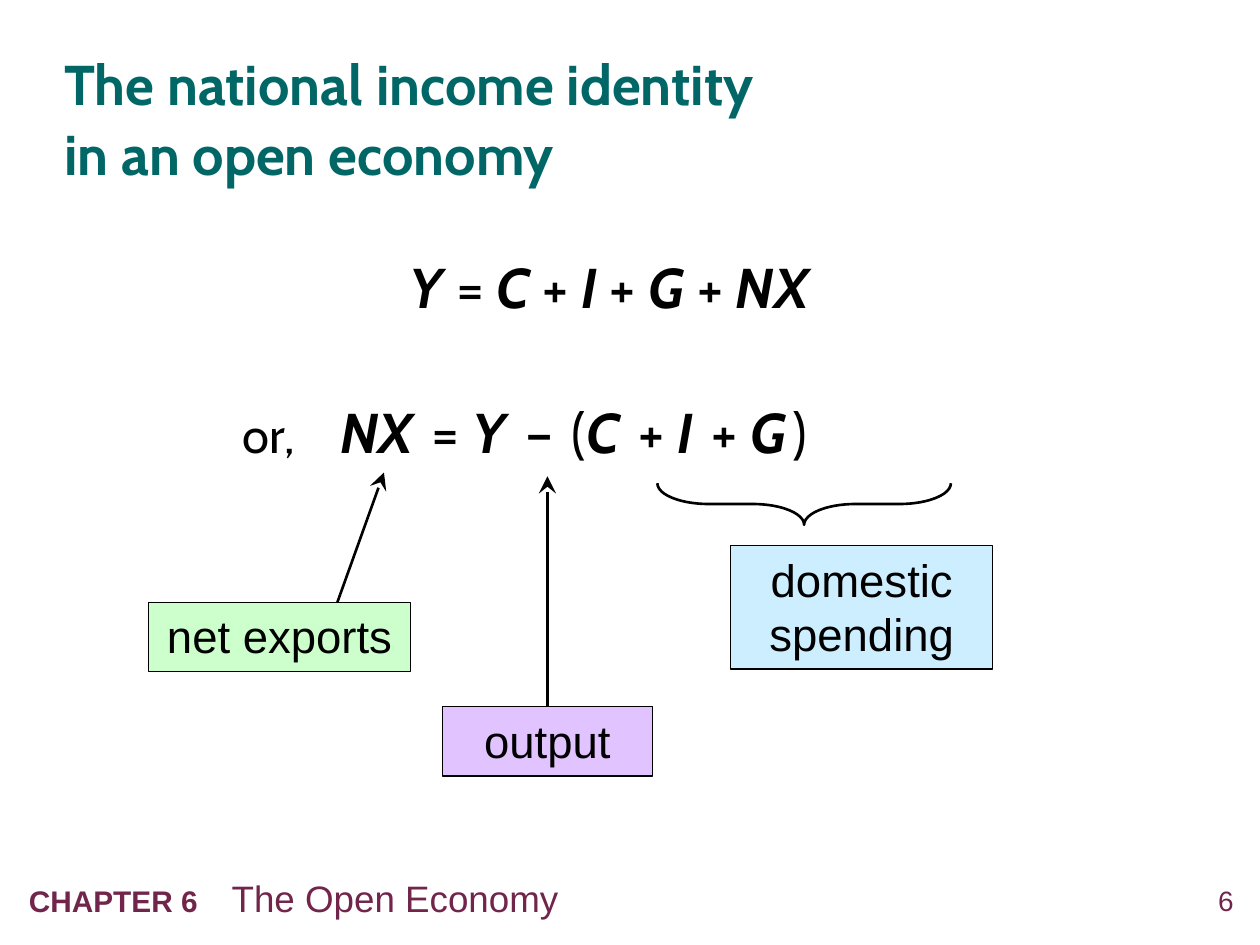
import dataclasses

import pptx
import pptx.dml.color
import pptx.enum.shapes
import pptx.enum.text
import pptx.oxml.ns
import pptx.util
from lxml import etree

COLOURS = {
    "paper": "FFFFFF", "ink": "000000", "title": "006666", "footer": "71254B",
    "exports": "CCFFCC", "output": "E1C3FF", "spending": "CDEEFF",
}
COLUMNS, ROWS = 100, 75
PAGE_WIDTH, PAGE_HEIGHT = pptx.util.Inches(10), pptx.util.Inches(7.5)
ALIGN = pptx.enum.text.PP_ALIGN
ANCHOR = pptx.enum.text.MSO_ANCHOR
SHAPE = pptx.enum.shapes.MSO_SHAPE


def across(columns):
    return round(PAGE_WIDTH * columns / COLUMNS)


def down(rows):
    return round(PAGE_HEIGHT * rows / ROWS)


@dataclasses.dataclass
class Box:
    """A region in grid columns and rows."""
    left: float
    top: float
    width: float
    height: float

    def lengths(self):
        return across(self.left), down(self.top), across(self.width), down(self.height)


def colour(name):
    return pptx.dml.color.RGBColor.from_string(COLOURS[name])


def add_child(parent, tag, **attributes):
    child = etree.SubElement(parent, pptx.oxml.ns.qn(tag))
    for name, value in attributes.items():
        child.set(name, str(value))
    return child


def add_span(para, text, size, font="Cabin", tint="ink", bold=False, italic=False):
    span = para.add_run()
    span.text = text
    span.font.name = font
    span.font.size = pptx.util.Pt(size)
    span.font.bold = bold
    span.font.italic = italic
    span.font.color.rgb = colour(tint)
    return span


def add_tab_stop(para, columns):
    stops = add_child(para._p.get_or_add_pPr(), "a:tabLst")
    add_child(stops, "a:tab", pos=across(columns), algn="l")


def prepare_frame(shape, anchor=ANCHOR.TOP, inset=True):
    frame = shape.text_frame
    frame.word_wrap = True
    frame.auto_size = pptx.enum.text.MSO_AUTO_SIZE.NONE
    frame.vertical_anchor = anchor
    side, edge = (across(1), down(0.5)) if inset else (0, 0)
    frame.margin_left = frame.margin_right = side
    frame.margin_top = frame.margin_bottom = edge
    return frame.paragraphs[0]


def add_text_box(page, box, inset=True):
    return prepare_frame(page.shapes.add_textbox(*box.lengths()), inset=inset)


def place_placeholder(shape, box, inset=True):
    shape.left, shape.top, shape.width, shape.height = box.lengths()
    para = prepare_frame(shape, ANCHOR.MIDDLE, inset)
    para.line_spacing = 1.05
    para.space_before = pptx.util.Pt(0)
    return para


def add_footer(page, box):
    number = add_text_box(page, Box(box.left + 91.1, box.top + 1.1, 5.5, 3.2), inset=False)
    number.alignment = ALIGN.RIGHT
    add_span(number, "6", 16, "Arial", "footer")
    chapter = add_text_box(page, Box(box.left, box.top, 81.8, box.height))
    add_tab_stop(chapter, 16.1)
    add_span(chapter, "CHAPTER 6\t", 17, "Arial", "footer", bold=True)
    add_span(chapter, "The Open Economy", 21, "Arial", "footer")


def add_title(page, box):
    para = place_placeholder(page.shapes.title, box, inset=False)
    para.alignment = ALIGN.LEFT
    add_span(para, "The national income identity", 32, tint="title", bold=True)
    para.add_line_break()
    add_span(para, "in an open economy", 32, tint="title", bold=True)


def add_identity(page, box):
    para = place_placeholder(page.placeholders[1], box)
    properties = para._p.get_or_add_pPr()
    properties.set("marL", "0")
    properties.set("indent", "0")
    add_child(properties, "a:buNone")
    para.alignment = ALIGN.CENTER
    for symbol, operator in zip(("Y", "C", "I", "G", "NX"), (" = ", " + ", " + ", " + ", "")):
        add_span(para, symbol, 32, bold=True, italic=True)
        if operator:
            add_span(para, operator, 32)


def add_wide_space(para):
    """One space widened by half of its own width."""
    gap = add_span(para, " ", 32, bold=True, italic=True)
    gap._r.get_or_add_rPr().set("spc", "350")


def add_net_exports_equation(page, box):
    para = add_text_box(page, box)
    para.line_spacing = 0.9
    add_tab_stop(para, 7.7)
    add_span(para, "or,\t", 28)
    for symbol, operator in (("NX", "= "), ("Y", "–"), ("C", "+ "), ("I", "+ ")):
        if symbol == "C":
            add_wide_space(para)
            add_span(para, "(", 32)
        add_span(para, symbol, 32, bold=True, italic=True)
        add_wide_space(para)
        add_span(para, operator, 32)
    add_span(para, "G", 32, bold=True, italic=True)
    add_span(para, " ", 16, bold=True, italic=True)
    add_span(para, ")", 32)


def draw_outline(shape):
    shape.line.color.rgb = colour("ink")
    shape.line.width = pptx.util.Pt(1.5)


def add_label(page, box, text, fill):
    label = page.shapes.add_shape(SHAPE.RECTANGLE, *box.lengths())
    label.shadow.inherit = False
    label.fill.solid()
    label.fill.fore_color.rgb = colour(fill)
    label.line.color.rgb = colour("ink")
    label.line.width = pptx.util.Pt(0.75)
    para = prepare_frame(label)
    para.alignment = ALIGN.CENTER
    add_span(para, text, 26, "Arial")
    return label


def add_arrow_callout(page, box, text, fill, start, rise, drift=0):
    """A label whose arrow leaves its top edge at a share of its width."""
    label = add_label(page, box, text, fill)
    foot = box.left + box.width * start
    arrow = page.shapes.add_connector(
        pptx.enum.shapes.MSO_CONNECTOR.STRAIGHT,
        across(foot), down(box.top), across(foot + drift), down(box.top - rise))
    if start == 0.5:
        arrow.begin_connect(label, 0)
    draw_outline(arrow)
    add_child(arrow.line._get_or_add_ln(), "a:tailEnd", type="stealth", w="lg", len="lg")
    add_child(arrow._element.spPr, "a:effectLst")


def add_brace_callout(page, box, text, fill):
    """A label below a brace that is turned to point down at it."""
    span, depth = 23.3, 3.3
    centre_x, centre_y = box.left + box.width * 0.28, box.top - depth
    brace = page.shapes.add_shape(SHAPE.LEFT_BRACE, *Box(
        centre_x - depth / 2, centre_y - span / 2, depth, span).lengths())
    brace.rotation = 270
    brace.adjustments[0] = 1.24
    brace.shadow.inherit = False
    brace.fill.background()
    draw_outline(brace)
    add_label(page, box, text, fill)


def main():
    deck = pptx.Presentation()
    deck.slide_width, deck.slide_height = PAGE_WIDTH, PAGE_HEIGHT
    page = deck.slides.add_slide(deck.slide_layouts[1])
    page.background.fill.solid()
    page.background.fill.fore_color.rgb = colour("paper")
    add_footer(page, Box(1.3, 69, 97, 4.5))
    add_title(page, Box(5.1, 4.1, 90.2, 10.3))
    add_identity(page, Box(18.4, 18.1, 59.9, 8.9))
    add_net_exports_equation(page, Box(18.3, 31.7, 64.2, 6.7))
    add_arrow_callout(page, Box(11.8, 47.8, 20.8, 5.5), "net exports", "exports", 0.72, 10.3, 3.7)
    add_brace_callout(page, Box(58, 43.3, 20.8, 9.8), "domestic spending", "spending")
    add_arrow_callout(page, Box(35.1, 56.1, 16.7, 5.5), "output", "output", 0.5, 18.3)
    deck.save("out.pptx")


if __name__ == "__main__":
    main()
